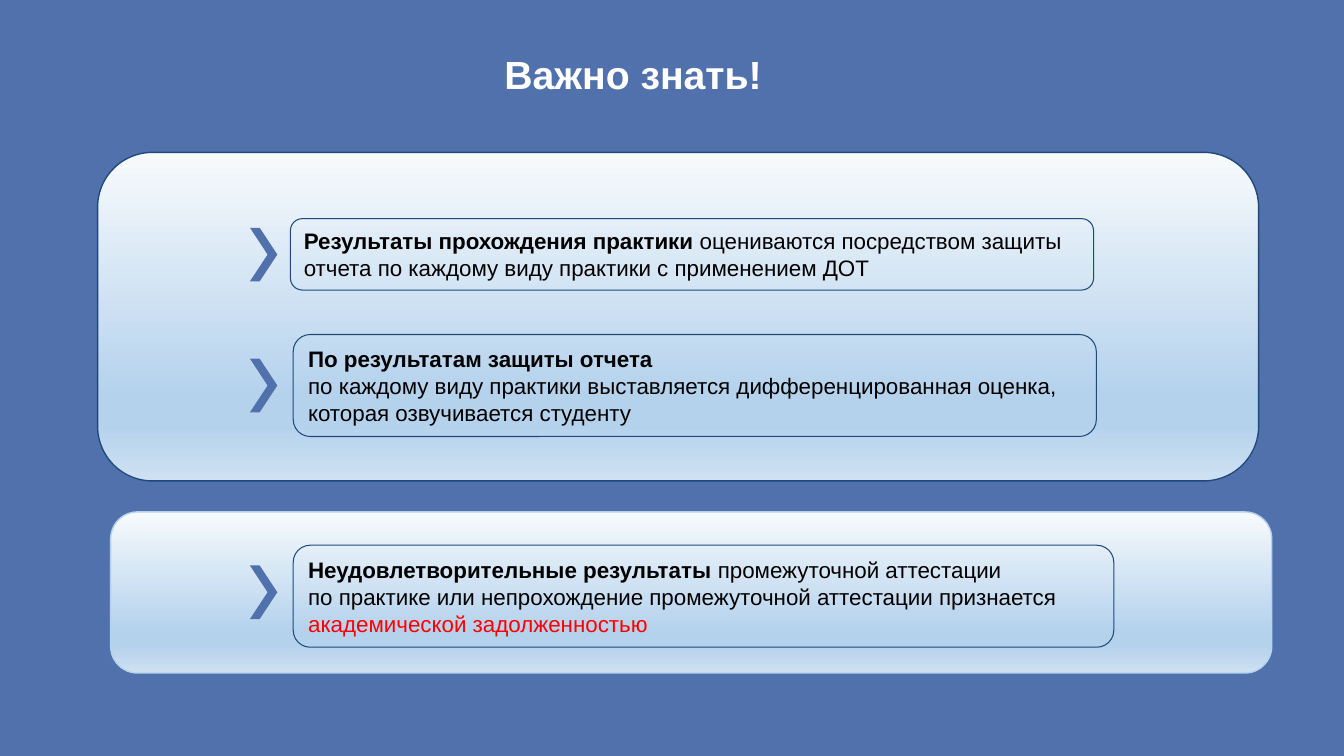
from copy import deepcopy

from pptx import Presentation
from pptx.dml.color import RGBColor
from pptx.enum.shapes import MSO_SHAPE
from pptx.enum.text import MSO_ANCHOR, MSO_AUTO_SIZE, PP_ALIGN
from pptx.oxml.ns import qn
from pptx.util import Cm, Pt

ROUND = MSO_SHAPE.ROUNDED_RECTANGLE
CHEVRON = MSO_SHAPE.CHEVRON
MIDDLE = MSO_ANCHOR.MIDDLE
GROW = MSO_AUTO_SIZE.SHAPE_TO_FIT_TEXT
LEFT = PP_ALIGN.LEFT
CENTER = PP_ALIGN.CENTER

BLUE = RGBColor(0x51, 0x71, 0xAC)
NAVY = RGBColor(0x1F, 0x49, 0x7D)
PALE = RGBColor(0xF7, 0xFA, 0xFD)
SKY = RGBColor(0xB5, 0xD2, 0xEC)
MIST = RGBColor(0xCE, 0xE1, 0xF2)
WHITE = RGBColor(0xFF, 0xFF, 0xFF)
BLACK = RGBColor(0, 0, 0)
RED = RGBColor(0xFF, 0, 0)
STOPS = [(0, PALE), (0.74, SKY), (0.83, SKY), (1, MIST)]


def style(run, size, color, bold):
    font = run.font
    font.name = "Arial"
    font.size = Pt(size)
    font.bold = bold
    font.color.rgb = color


def add_shape(slide, kind, box):
    shape = slide.shapes.add_shape(kind, *[Cm(v) for v in box])
    shape.shadow.inherit = False
    return shape


def add_title(slide, box):
    title = slide.shapes.title
    title.left, title.top, title.width, title.height = [Cm(v) for v in box]
    frame = title.text_frame
    frame.text = "Важно знать!"
    frame.vertical_anchor = MIDDLE
    para = frame.paragraphs[0]
    para.alignment = CENTER
    para.line_spacing = 0.9
    para.space_before = Pt(7.5)
    style(para.runs[0], 28, WHITE, True)


def shade(shape):
    fill = shape.fill
    fill.gradient()
    fill.gradient_angle = 270
    stops = shape._element.spPr.find(qn("a:gradFill")).find(qn("a:gsLst"))
    for _ in range(len(STOPS) - len(stops)):
        stops.append(deepcopy(stops[0]))
    for stop, (place, color) in zip(fill.gradient_stops, STOPS):
        stop.position = place
        stop.color.rgb = color


def add_note(slide, box, lines):
    note = add_shape(slide, ROUND, box)
    note.fill.background()
    note.line.color.rgb = NAVY
    note.line.width = Pt(0.75)
    frame = note.text_frame
    frame.word_wrap = True
    frame.auto_size = GROW
    frame.vertical_anchor = MIDDLE
    for i, parts in enumerate(lines):
        para = frame.add_paragraph() if i else frame.paragraphs[0]
        para.alignment = LEFT
        for text, color, bold in parts:
            run = para.add_run()
            run.text = text
            style(run, 16, color, bold)


def add_mark(slide, left, top):
    mark = add_shape(slide, CHEVRON, (left, top, 0.69, 1.35))
    mark.adjustments[0] = 0.644
    mark.fill.solid()
    mark.fill.fore_color.rgb = BLUE
    mark.line.fill.background()


def add_panel(slide, box, edge, indent, items):
    left, top = box[:2]
    panel = add_shape(slide, ROUND, box)
    shade(panel)
    panel.line.color.rgb = edge
    panel.line.width = Pt(1)
    for (x, y, width, height), drop, lines in items:
        add_note(slide, (left + x, top + y, width, height), lines)
        add_mark(slide, left + indent, top + drop)


RESULTS = [
    ((4.86, 1.67, 20.24, 1.8), 1.9, [
        [("Результаты прохождения практики ", BLACK, True),
         ("оцениваются посредством защиты отчета по каждому виду "
          "практики с применением ДОТ", BLACK, False)],
    ]),
    ((4.93, 4.59, 20.24, 2.57), 5.2, [
        [("По результатам защиты отчета", BLACK, True)],
        [("по каждому виду практики выставляется дифференцированная "
          "оценка, которая озвучивается студенту", BLACK, False)],
    ]),
]
FAILURE = [
    ((4.6, 0.84, 20.68, 2.57), 1.35, [
        [("Неудовлетворительные результаты ", BLACK, True),
         ("промежуточной аттестации", BLACK, False)],
        [("по практике или непрохождение промежуточной аттестации "
          "признается ", BLACK, False),
         ("академической задолженностью", RED, False)],
    ]),
]


def main():
    deck = Presentation()
    deck.slide_width = Cm(33.87)
    deck.slide_height = Cm(19.05)
    slide = deck.slides.add_slide(deck.slide_layouts[5])
    back = slide.background.fill
    back.solid()
    back.fore_color.rgb = BLUE
    add_title(slide, (4.45, 0.81, 23.01, 2.26))
    add_panel(slide, (2.46, 3.84, 29.26, 8.28), NAVY, 3.84, RESULTS)
    add_panel(slide, (2.79, 12.9, 29.26, 4.06), SKY, 3.51, FAILURE)
    deck.save("out.pptx")


if __name__ == "__main__":
    main()
